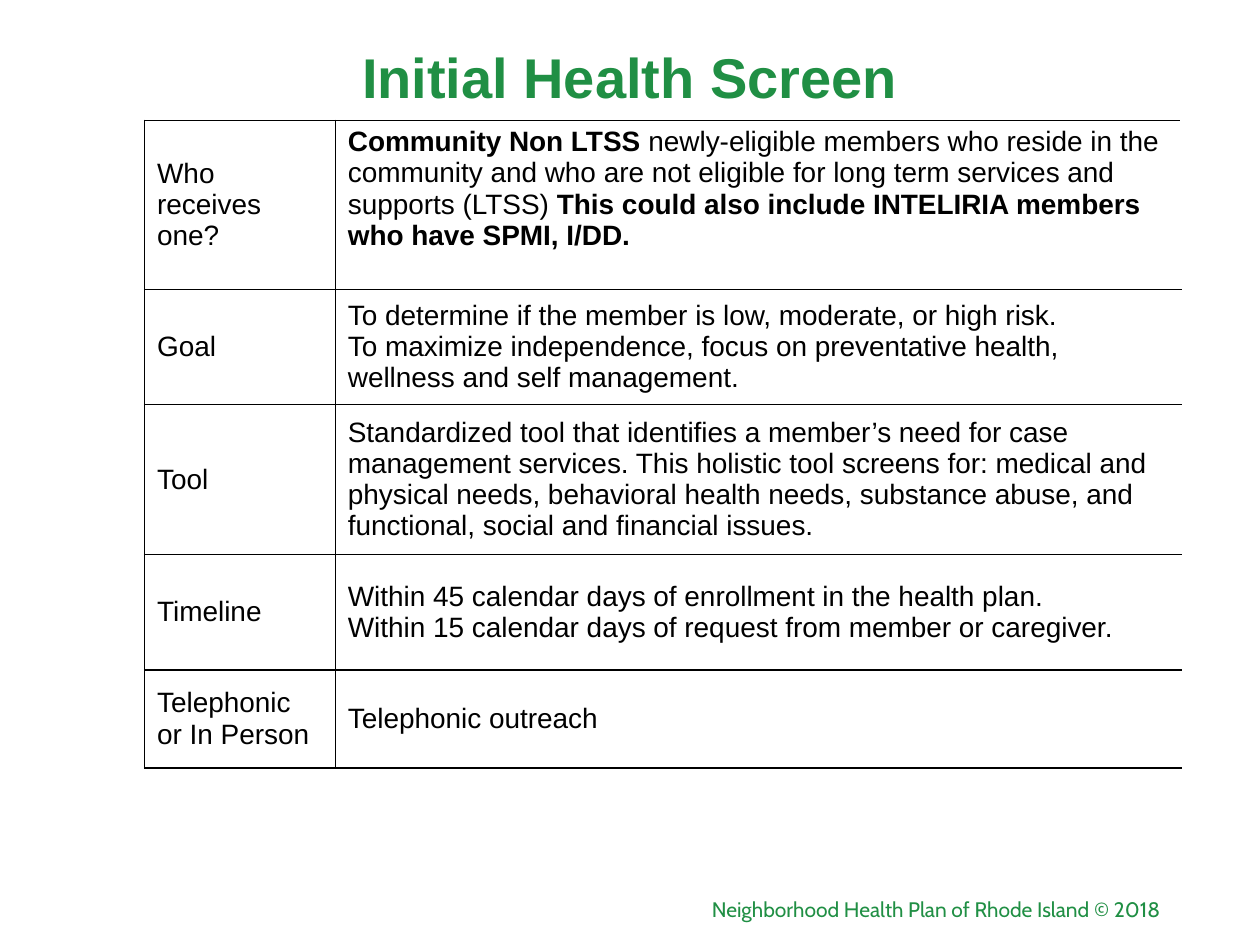
from lxml.etree import SubElement
from pptx import Presentation
from pptx.dml.color import RGBColor
from pptx.enum.text import MSO_ANCHOR, PP_ALIGN
from pptx.oxml.ns import qn
from pptx.util import Pt

GREEN, BLACK = "208F44", "000000"
COLUMN_WIDTHS = [109, 483.2]
# Each row: height, label, paragraphs of (text, bold) spans
ROWS = [
    (96.5, "Who receives one?", [[
        ("Community Non LTSS ", True),
        ("newly-eligible members who reside in the community and who are not "
         "eligible for long term services and supports (LTSS) ", False),
        ("This could also include INTELIRIA members who have SPMI, I/DD.", True)]]),
    (66, "Goal", [
        [("To determine if the member is low, moderate, or high risk.", False)],
        [("To maximize independence, focus on preventative health, wellness "
          "and self management.", False)]]),
    (85.5, "Tool", [[
        ("Standardized tool that identifies a member’s need for case management "
         "services. This holistic tool screens for: medical and physical needs, "
         "behavioral health needs, substance abuse, and functional, social and "
         "financial issues.", False)]]),
    (66, "Timeline", [
        [("Within 45 calendar days of enrollment in the health plan.", False)],
        [("Within 15 calendar days of request from member or caregiver.", False)]]),
    (56, "Telephonic or In Person", [[("Telephonic outreach", False)]]),
]


def colour(value):
    return RGBColor.from_string(value)


def format_font(font, name, size, value):
    font.name, font.size = name, Pt(size)
    font.color.rgb = colour(value)


def add_title(page, text):
    title = page.shapes.title
    title.left, title.top, title.width, title.height = Pt(36), Pt(0.7), Pt(648), Pt(90)
    title.text_frame.vertical_anchor = MSO_ANCHOR.MIDDLE
    title.text_frame.text = text
    para = title.text_frame.paragraphs[0]
    para.alignment, para.line_spacing = PP_ALIGN.CENTER, 0.9
    format_font(para.font, "Arial", 32, GREEN)
    para.font.bold = True


def draw_borders(cell, sides):
    properties = cell._tc.get_or_add_tcPr()
    for side in sides:
        line = SubElement(properties, qn(f"a:ln{side}"), w=str(Pt(1)))
        fill = SubElement(line, qn("a:solidFill"))
        SubElement(fill, qn("a:srgbClr"), val=BLACK)


def fill_cell(cell, paragraphs, sides):
    draw_borders(cell, sides)
    cell.fill.background()
    cell.vertical_anchor = MSO_ANCHOR.MIDDLE
    frame = cell.text_frame
    for index, spans in enumerate(paragraphs):
        para = frame.add_paragraph() if index else frame.paragraphs[0]
        for text, bold in spans:
            span = para.add_run()
            span.text, span.font.bold = text, bold
        format_font(para.font, "Arial", 16, BLACK)


def add_screen_table(page):
    height = sum(row[0] for row in ROWS)
    table = page.shapes.add_table(len(ROWS), 2, Pt(82.6), Pt(68.8),
                                  Pt(sum(COLUMN_WIDTHS)), Pt(height)).table
    table.first_row = table.horz_banding = False
    for column, width in zip(table.columns, COLUMN_WIDTHS):
        column.width = Pt(width)
    for row, (height, label, paragraphs) in zip(table.rows, ROWS):
        row.height = Pt(height)
        fill_cell(row.cells[0], [[(label, False)]], "LRTB")
        fill_cell(row.cells[1], paragraphs, "LTB")  # open on the right
    table.cell(0, 1).vertical_anchor = MSO_ANCHOR.TOP


def add_footer(page, text):
    box = page.shapes.add_textbox(Pt(238.3), Pt(509.8), Pt(432), Pt(19.4))
    frame = box.text_frame
    frame.word_wrap = True
    frame.vertical_anchor = MSO_ANCHOR.MIDDLE
    frame.text = text
    para = frame.paragraphs[0]
    para.alignment = PP_ALIGN.RIGHT
    format_font(para.font, "Cabin", 12, GREEN)


def main():
    deck = Presentation()
    deck.slide_width, deck.slide_height = Pt(720), Pt(540)
    page = deck.slides.add_slide(deck.slide_layouts[5])  # Title Only
    add_title(page, "Initial Health Screen")
    add_screen_table(page)
    add_footer(page, "Neighborhood Health Plan of Rhode Island © 2018")
    deck.save("out.pptx")


if __name__ == "__main__":
    main()
